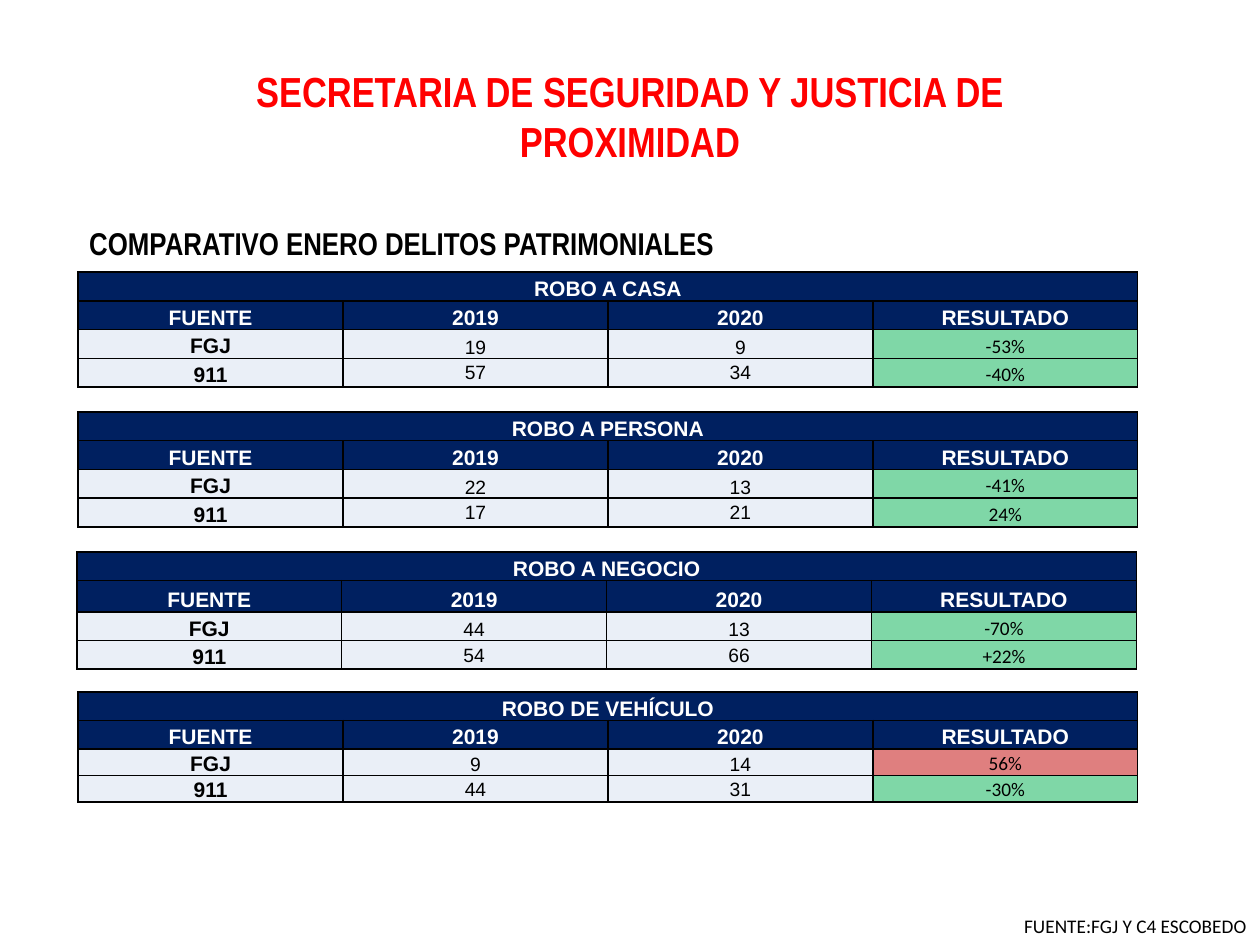
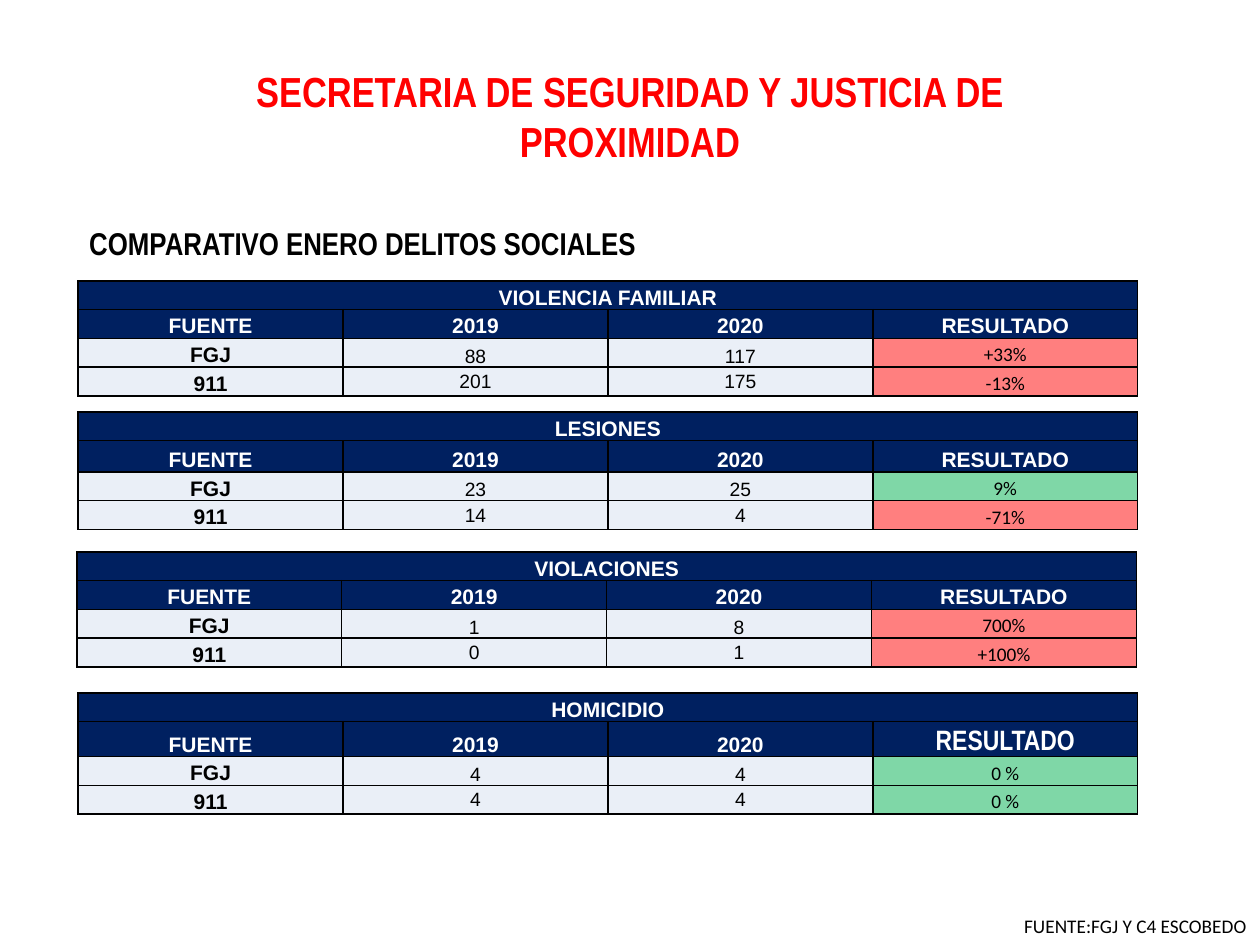
import pptx
import pptx.util
import pptx.dml.color
import pptx.enum.text
import pptx.oxml
import pptx.oxml.ns
import lxml.etree

ALIGN = pptx.enum.text.PP_ALIGN
ANCHOR = pptx.enum.text.MSO_ANCHOR
FIT = pptx.enum.text.MSO_AUTO_SIZE
qn = pptx.oxml.ns.qn

NAVY, PALE, WHITE, BLACK = "002060", "EAEFF7", "FFFFFF", "000000"
RED, GREEN, WINE = "FF0000", "00B050", "C00000"
NARROW, SANS, BODY = "Arial Narrow", "Arial", "Calibri"
HEADS = ("FUENTE", "2019", "2020", "RESULTADO")
EVEN = (2.28, 2.28, 2.28, 2.28)
TALL = (2.28, 2.48, 2.28, 2.28)
FLAT = (2.28, 2.28, 2.1, 2.1)
DEEP = (2.28, 2.75, 2.28, 2.28)


def hue(code):
    return pptx.dml.color.RGBColor.from_string(code)


class Deck:
    cols, rows = 100, 75

    def __init__(self):
        self.file = pptx.Presentation()
        self.file.slide_width = pptx.util.Inches(10)
        self.file.slide_height = pptx.util.Inches(7.5)
        self.slide = None

    def x(self, n):
        return int(self.file.slide_width * n / self.cols)

    def y(self, n):
        return int(self.file.slide_height * n / self.rows)

    def box(self, left, top, wide, high):
        return self.x(left), self.y(top), self.x(wide), self.y(high)

    def text(self, frame, words, size, face, color=BLACK, bold=False, align=ALIGN.LEFT):
        par = frame.paragraphs[0]
        par.alignment = align
        run = par.add_run()
        run.text = words
        font = run.font
        font.size, font.name, font.bold = pptx.util.Pt(size), face, bold
        font.color.rgb = hue(color)

    def title(self, words):
        self.slide = self.file.slides.add_slide(self.file.slide_layouts[5])
        shape = self.slide.shapes.title
        shape.left, shape.top, shape.width, shape.height = self.box(19, 4.7, 62, 9.1)
        frame = shape.text_frame
        frame.word_wrap, frame.auto_size = True, FIT.SHAPE_TO_FIT_TEXT
        frame.vertical_anchor = ANCHOR.TOP
        self.text(frame, words, 24, NARROW, RED, True, ALIGN.CENTER)

    def label(self, area, words, size, face, bold=False, wrap=True):
        frame = self.slide.shapes.add_textbox(*self.box(*area)).text_frame
        frame.word_wrap, frame.auto_size = wrap, FIT.SHAPE_TO_FIT_TEXT
        self.text(frame, words, size, face, bold=bold)

    def cell(self, cell, fill, alpha=None, anchor=ANCHOR.BOTTOM):
        edge = pptx.util.Inches(0.01)
        cell.margin_left = cell.margin_right = cell.margin_top = edge
        cell.margin_bottom = 0
        cell.vertical_anchor = anchor
        props = cell._tc.get_or_add_tcPr()
        for side in ("lnL", "lnR", "lnT", "lnB"):
            line = lxml.etree.SubElement(props, qn("a:" + side), w="12700")
            solid = lxml.etree.SubElement(line, qn("a:solidFill"))
            lxml.etree.SubElement(solid, qn("a:srgbClr"), val=BLACK)
        cell.fill.solid()
        cell.fill.fore_color.rgb = hue(fill)
        if alpha:
            tone = props.find(qn("a:solidFill")).find(qn("a:srgbClr"))
            lxml.etree.SubElement(tone, qn("a:alpha"), val=str(alpha * 1000))

    def table(self, left, top, sizes, name, lines, last=(12, SANS)):
        area = self.box(left, top, 84.1, sum(sizes))
        grid = self.slide.shapes.add_table(4, 4, *area).table
        for col in grid.columns:
            col.width = self.x(84.1 / 4)
        for row, size in zip(grid.rows, sizes):
            row.height = self.y(size)
        for col, head in enumerate(HEADS):
            self.cell(grid.cell(0, col), NAVY)
            cell = grid.cell(1, col)
            self.cell(cell, NAVY)
            style = last if col == 3 else (12, SANS)
            self.text(cell.text_frame, head, *style, WHITE, True, ALIGN.CENTER)
        grid.cell(0, 0).merge(grid.cell(0, 3))
        self.text(grid.cell(0, 0).text_frame, name, 12, SANS, WHITE, True, ALIGN.CENTER)
        for row, (source, line) in enumerate(zip(("FGJ", "911"), lines), 2):
            *items, tone = line
            for col, words in enumerate((source, *items)):
                cell = grid.cell(row, col)
                middle = row == 3 and col in (1, 2)
                self.cell(cell, tone if col == 3 else PALE, 50 if col == 3 else None,
                          ANCHOR.MIDDLE if middle else ANCHOR.BOTTOM)
                self.text(cell.text_frame, words, 11 if col else 12,
                          BODY if col == 3 else SANS, BLACK, col == 0, ALIGN.CENTER)

    def page(self, topic, tables):
        self.title("SECRETARIA DE SEGURIDAD Y JUSTICIA DE PROXIMIDAD")
        self.label((6.1, 17.3, 73.8, 4), topic, 18, NARROW, True)
        for spot, table in enumerate(tables):
            self.table(6.1 if spot == 2 else 6.2, *table)
        self.label((80.3, 72.1, 19.7, 2.9), "FUENTE:FGJ Y C4 ESCOBEDO", 11, BODY, wrap=False)


def main():
    deck = Deck()
    deck.page("COMPARATIVO ENERO DELITOS PATRIMONIALES", (
        (21.6, EVEN, "ROBO A CASA",
         (("19", "9", "-53%", GREEN), ("57", "34", "-40%", GREEN))),
        (32.7, EVEN, "ROBO A PERSONA",
         (("22", "13", "-41%", GREEN), ("17", "21", "24%", GREEN))),
        (43.8, TALL, "ROBO A NEGOCIO",
         (("44", "13", "-70%", GREEN), ("54", "66", "+22%", GREEN))),
        (54.9, FLAT, "ROBO DE VEHÍCULO",
         (("9", "14", "56%", WINE), ("44", "31", "-30%", GREEN))),
    ))
    deck.page("COMPARATIVO ENERO DELITOS SOCIALES", (
        (22.3, EVEN, "VIOLENCIA FAMILIAR",
         (("88", "117", "+33%", RED), ("201", "175", "-13%", RED))),
        (32.7, TALL, "LESIONES",
         (("23", "25", "9%", GREEN), ("14", "4", "-71%", RED))),
        (43.8, EVEN, "VIOLACIONES",
         (("1", "8", "700%", RED), ("0", "1", "+100%", RED))),
        (55, DEEP, "HOMICIDIO",
         (("4", "4", "0 %", GREEN), ("4", "4", "0 %", GREEN)), (16, NARROW)),
    ))
    deck.file.save("out.pptx")


if __name__ == "__main__":
    main()
